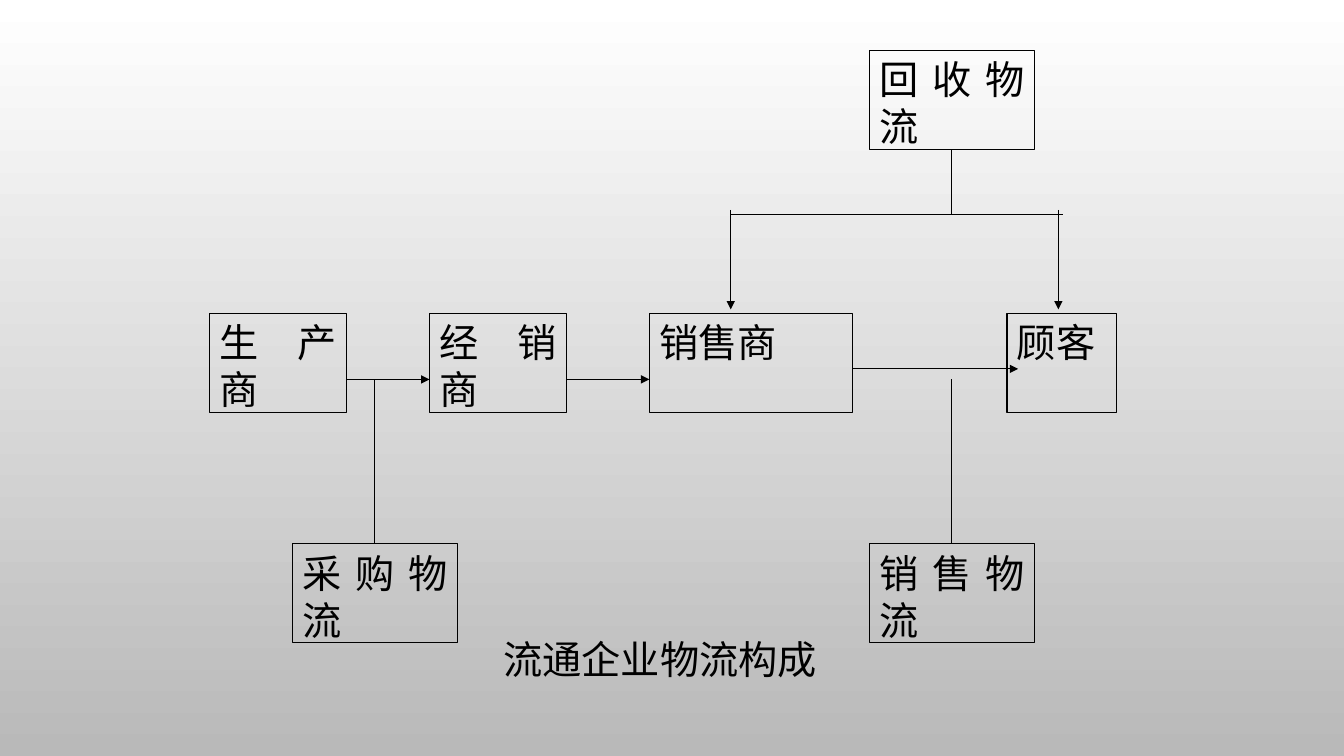
from dataclasses import dataclass

from lxml import etree
from pptx import Presentation
from pptx.dml.color import RGBColor
from pptx.enum.shapes import MSO_CONNECTOR, MSO_SHAPE
from pptx.enum.text import MSO_ANCHOR, MSO_AUTO_SIZE, PP_ALIGN
from pptx.oxml.ns import qn
from pptx.slide import Slide
from pptx.util import Pt

BLACK = RGBColor(0x00, 0x00, 0x00)
WHITE = RGBColor(0xFF, 0xFF, 0xFF)
GREY = RGBColor(0xB9, 0xB9, 0xB9)

RECTANGLE = MSO_SHAPE.RECTANGLE
STRAIGHT = MSO_CONNECTOR.STRAIGHT
CENTER = PP_ALIGN.CENTER
JUSTIFY = PP_ALIGN.JUSTIFY
TOP = MSO_ANCHOR.TOP
MIDDLE = MSO_ANCHOR.MIDDLE
NO_AUTOFIT = MSO_AUTO_SIZE.NONE

TITLE_ONLY_LAYOUT = 5
FONT_SIZE = Pt(28)
LINE_WIDTH = Pt(0.75)

BOX_HEIGHT = 70.5
RECYCLING_TOP = 36
CHAIN_TOP = 224
LOGISTICS_TOP = 388.5
FLOW_Y = 271
SALES_FLOW_Y = 263.5
BRANCH_Y = 153.5
ARROW_START_Y = 150
ARROW_END_Y = 221
PURCHASE_X = 267.8
SALES_X = 679.8
SELLER_X = 522
CUSTOMER_X = 756


@dataclass(frozen=True)
class Box:
    text: str
    left: float
    top: float
    width: float


@dataclass(frozen=True)
class Line:
    start_x: float
    start_y: float
    end_x: float
    end_y: float
    arrow: bool = False


BOXES = [
    Box("生产商", 149.8, CHAIN_TOP, 98),
    Box("经销商", 306.8, CHAIN_TOP, 98),
    Box("销售商", 463.8, CHAIN_TOP, 145.5),
    Box("顾客", 719.3, CHAIN_TOP, 78.5),
    Box("回收物流", 621, RECYCLING_TOP, 118),
    Box("采购物流", 208.8, LOGISTICS_TOP, 118),
    Box("销售物流", 621, LOGISTICS_TOP, 118),
]

LINES = [
    Line(247.8, FLOW_Y, 306.8, FLOW_Y, arrow=True),
    Line(404.8, FLOW_Y, 463.8, FLOW_Y, arrow=True),
    Line(609.3, SALES_FLOW_Y, 727.3, SALES_FLOW_Y, arrow=True),
    Line(PURCHASE_X, FLOW_Y, PURCHASE_X, LOGISTICS_TOP),
    Line(SALES_X, FLOW_Y, SALES_X, LOGISTICS_TOP),
    Line(SELLER_X, BRANCH_Y, 759, BRANCH_Y),
    Line(SELLER_X, ARROW_START_Y, SELLER_X, ARROW_END_Y, arrow=True),
    Line(SALES_X, RECYCLING_TOP + BOX_HEIGHT, SALES_X, BRANCH_Y),
    Line(CUSTOMER_X, ARROW_START_Y, CUSTOMER_X, ARROW_END_Y, arrow=True),
]


def paint_background(slide: Slide) -> None:
    fill = slide.background.fill
    fill.gradient()
    fill.gradient_angle = 270
    for stop, color, position in zip(fill.gradient_stops, (WHITE, GREY), (0, 1)):
        stop.color.rgb = color
        stop.position = position


def write_text(shape, text: str, font_name: str, alignment: PP_ALIGN) -> None:
    frame = shape.text_frame
    frame.text = text
    paragraph = frame.paragraphs[0]
    paragraph.alignment = alignment
    paragraph.font.name = font_name
    paragraph.font.size = FONT_SIZE
    paragraph.font.color.rgb = BLACK


def add_box(slide: Slide, box: Box) -> None:
    shape = slide.shapes.add_shape(
        RECTANGLE, Pt(box.left), Pt(box.top), Pt(box.width), Pt(BOX_HEIGHT)
    )
    shape.shadow.inherit = False
    shape.fill.background()
    shape.line.color.rgb = BLACK
    shape.line.width = LINE_WIDTH
    shape.text_frame.word_wrap = True
    shape.text_frame.vertical_anchor = TOP
    write_text(shape, box.text, "Times New Roman", JUSTIFY)


def add_line(slide: Slide, line: Line) -> None:
    connector = slide.shapes.add_connector(
        STRAIGHT, Pt(line.start_x), Pt(line.start_y), Pt(line.end_x), Pt(line.end_y)
    )
    connector.line.color.rgb = BLACK
    connector.line.width = LINE_WIDTH
    if line.arrow:
        outline = connector.line._get_or_add_ln()
        etree.SubElement(outline, qn("a:tailEnd"), type="triangle")
    etree.SubElement(connector._element.spPr, qn("a:effectLst"))


def place_title(slide: Slide, text: str) -> None:
    title = slide.shapes.title
    title.left, title.top, title.width, title.height = Pt(348.5), Pt(450), Pt(246), Pt(41)
    title.text_frame.word_wrap = False
    title.text_frame.auto_size = NO_AUTOFIT
    title.text_frame.vertical_anchor = MIDDLE
    write_text(title, text, "Calibri", CENTER)


def main() -> None:
    presentation = Presentation()
    presentation.slide_width = Pt(960)
    presentation.slide_height = Pt(540)
    slide = presentation.slides.add_slide(presentation.slide_layouts[TITLE_ONLY_LAYOUT])
    paint_background(slide)
    for box in BOXES:
        add_box(slide, box)
    for line in LINES:
        add_line(slide, line)
    place_title(slide, "流通企业物流构成")
    presentation.save("out.pptx")


if __name__ == "__main__":
    main()
